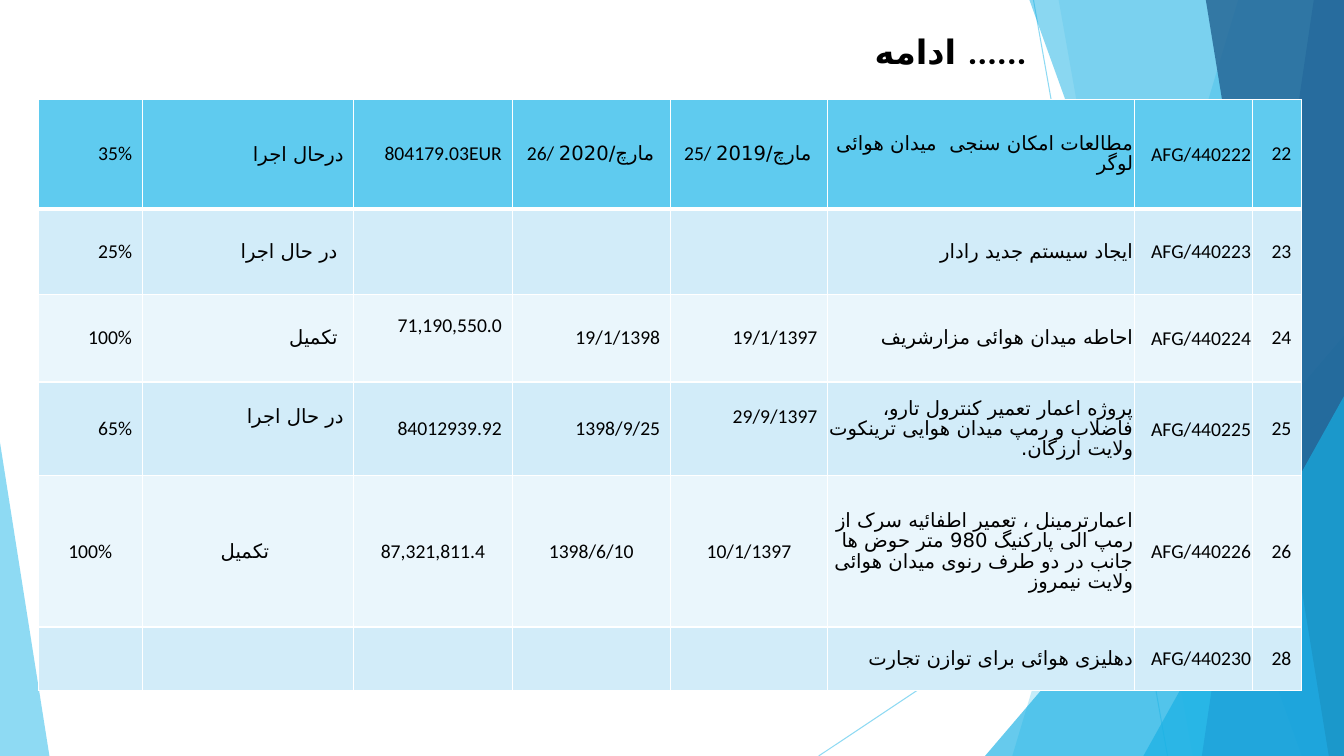
"""Build a slide with a Persian table of airport projects over a faceted blue background."""
from dataclasses import dataclass

from lxml import etree
from pptx import Presentation
from pptx import util as u
from pptx.dml.color import RGBColor
from pptx.enum import shapes, text
from pptx.oxml import ns

PX = 9144
WIDTH, HEIGHT = 1333, 750


@dataclass(frozen=True)
class Theme:
    sky: str = "5FCBEF"
    cyan: str = "17B0E4"
    blue: str = "2E83C3"
    navy: str = "226292"
    band_dark: str = "D2ECF9"
    band_light: str = "EAF6FC"
    white: str = "FFFFFF"
    ink: str = "000000"
    title_font: str = "Roboto"
    body_font: str = "Calibri"
    persian_font: str = "DejaVu Sans"
    title_size: int = 24
    body_size: int = 14
    line_spacing: float = 0.88


@dataclass(frozen=True)
class Ray:
    start: tuple[int, int]
    end: tuple[int, int]


@dataclass(frozen=True)
class Facet:
    top: int
    bottom: int
    color: str
    alpha: int


@dataclass(frozen=True)
class Wedge:
    left: int
    top: int
    width: int
    apex: int
    color: str
    alpha: int


@dataclass(frozen=True)
class Project:
    height: int
    progress: str
    status: str
    budget: str
    end: str
    start: str
    name: str
    code: str
    number: str
    centred: bool = False
    lifted: tuple[int, ...] = ()

    def values(self) -> list[str]:
        return [self.progress, self.status, self.budget, self.end,
                self.start, self.name, self.code, self.number]


THEME = Theme()
NAME_COLUMN, CODE_COLUMN = 5, 6
COLUMN_WIDTHS = [103, 210, 157, 157, 156, 304, 117, 49]
RAYS = [Ray((1025, 0), (1158, 750)), Ray((1333, 403), (812, 750))]
BACKDROP = [
    Facet(1228, 1004, THEME.sky, 36),
    Facet(1050, 1183, THEME.sky, 20),
    Wedge(977, 333, 356, 1, THEME.cyan, 66),
    Facet(1021, 1291, THEME.cyan, 50),
    Facet(1303, 1192, THEME.blue, 70),
    Facet(1196, 1318, THEME.navy, 80),
    Wedge(1134, 393, 199, 1, THEME.cyan, 66),
    Wedge(0, 439, 49, 0, THEME.sky, 70),
]
PROJECTS = [
    Project(108, "35%", "درحال اجرا", "804179.03EUR", "26/ مارچ/2020 ", "25/ مارچ/2019 ",
            "مطالعات امکان سنجی  میدان هوائی لوگر", "AFG/440222", "22"),
    Project(85, "25%", "در حال اجرا ", "", "", "",
            "ایجاد سیستم جدید رادار", "AFG/440223", "23"),
    Project(87, "100%", "تکمیل ", "71,190,550.0", "19/1/1398", "19/1/1397",
            "احاطه میدان هوائی مزارشریف", "AFG/440224", "24", lifted=(2,)),
    Project(93, "65%", "در حال اجرا", "84012939.92", "1398/9/25", "29/9/1397",
            "پروژه اعمار تعمیر کنترول تارو، فاضلاب و رمپ میدان هوایی ترینکوت ولایت ارزگان.",
            "AFG/440225", "25", lifted=(1, 4)),
    Project(150, "100%", "تکمیل ", "87,321,811.4", "1398/6/10", "10/1/1397",
            "اعمارترمینل ، تعمیر اطفائیه سرک از رمپ الی پارکنیگ 980 متر حوض ها "
            "جانب در دو طرف رنوی میدان هوائی ولایت نیمروز",
            "AFG/440226", "26", centred=True),
    Project(63, "", "", "", "", "", "دهلیزی هوائی برای توازن تجارت ", "AFG/440230", "28"),
]


def set_alpha(element, percent: int) -> None:
    color = next(element.iter(ns.qn("a:srgbClr")))
    etree.SubElement(color, ns.qn("a:alpha"), val=str(percent * 1000))


def draw_ray(slide, ray: Ray) -> None:
    line = slide.shapes.add_connector(
        shapes.MSO_CONNECTOR.STRAIGHT, *(n * PX for n in ray.start + ray.end))
    line.line.color.rgb = RGBColor.from_string(THEME.sky)
    line.line.width = u.Pt(0.75)
    properties = line._element.spPr
    set_alpha(properties, 70)
    etree.SubElement(properties, ns.qn("a:effectLst"))


def draw_backdrop(slide, part: Facet | Wedge) -> None:
    if isinstance(part, Facet):
        outline = slide.shapes.build_freeform(part.top, 0, scale=PX)
        outline.add_line_segments(
            [(WIDTH, 0), (WIDTH, HEIGHT), (part.bottom, HEIGHT)], close=True)
        pane = outline.convert_to_shape()
    else:
        pane = slide.shapes.add_shape(
            shapes.MSO_SHAPE.ISOSCELES_TRIANGLE, part.left * PX, part.top * PX,
            part.width * PX, (HEIGHT - part.top) * PX)
        pane.adjustments[0] = part.apex
    pane.shadow.inherit = False
    pane.fill.solid()
    pane.fill.fore_color.rgb = RGBColor.from_string(part.color)
    pane.line.fill.background()
    set_alpha(pane._element.spPr, part.alpha)


def format_runs(paragraph, font: str, size: int, bold: bool) -> None:
    for run in paragraph.runs:
        run.font.name = font
        run.font.size = u.Pt(size)
        run.font.bold = bold
        run.font.color.rgb = RGBColor.from_string(THEME.ink)
        etree.SubElement(run._r.get_or_add_rPr(), ns.qn("a:cs"), typeface=THEME.persian_font)


def draw_title(slide, wording: str) -> None:
    title = slide.shapes.add_textbox(88 * PX, 26 * PX, 940 * PX, 55 * PX)
    frame = title.text_frame
    frame.word_wrap = True
    frame.vertical_anchor = text.MSO_ANCHOR.TOP
    frame.text = wording
    frame.paragraphs[0].alignment = text.PP_ALIGN.RIGHT
    format_runs(frame.paragraphs[0], THEME.title_font, THEME.title_size, True)


def draw_borders(cell, row: int) -> None:
    thick = {0: "lnB", 1: "lnT"}.get(row)
    properties = cell._tc.get_or_add_tcPr()
    for side in ("lnL", "lnR", "lnT", "lnB"):
        width = u.Pt(3 if side == thick else 1)
        border = etree.SubElement(properties, ns.qn(f"a:{side}"), w=str(width))
        fill = etree.SubElement(border, ns.qn("a:solidFill"))
        etree.SubElement(fill, ns.qn("a:srgbClr"), val=THEME.white)


def fill_cell(cell, row: int, column: int, project: Project, value: str) -> None:
    draw_borders(cell, row)
    band = THEME.band_dark if row % 2 else THEME.band_light
    cell.fill.solid()
    cell.fill.fore_color.rgb = RGBColor.from_string(band if row else THEME.sky)
    cell.vertical_anchor = text.MSO_ANCHOR.MIDDLE
    if column in (NAME_COLUMN, CODE_COLUMN):
        cell.margin_left = cell.margin_right = cell.margin_top = PX
        cell.margin_bottom = 0
    elif column in project.lifted:
        cell.margin_bottom = 29 * PX
    cell.text_frame.text = value
    paragraph = cell.text_frame.paragraphs[0]
    centred = project.centred and column < NAME_COLUMN
    paragraph.alignment = text.PP_ALIGN.CENTER if centred else text.PP_ALIGN.RIGHT
    if column == NAME_COLUMN:
        paragraph.line_spacing = THEME.line_spacing
        paragraph._p.get_or_add_pPr().set("rtl", "1")
    format_runs(paragraph, THEME.body_font, THEME.body_size, False)


def draw_projects(slide, projects: list[Project]) -> None:
    table = slide.shapes.add_table(
        len(projects), len(COLUMN_WIDTHS), 38 * PX, 99 * PX, sum(COLUMN_WIDTHS) * PX,
        sum(project.height for project in projects) * PX).table
    for column, width in zip(table.columns, COLUMN_WIDTHS):
        column.width = width * PX
    for row, project in enumerate(projects):
        table.rows[row].height = project.height * PX
        for column, value in enumerate(project.values()):
            fill_cell(table.cell(row, column), row, column, project, value)


def main() -> None:
    deck = Presentation()
    deck.slide_width, deck.slide_height = WIDTH * PX, HEIGHT * PX
    slide = deck.slides.add_slide(deck.slide_layouts[6])
    for ray in RAYS:
        draw_ray(slide, ray)
    for part in BACKDROP:
        draw_backdrop(slide, part)
    draw_title(slide, "ادامه ......")
    draw_projects(slide, PROJECTS)
    deck.save("out.pptx")


if __name__ == "__main__":
    main()
